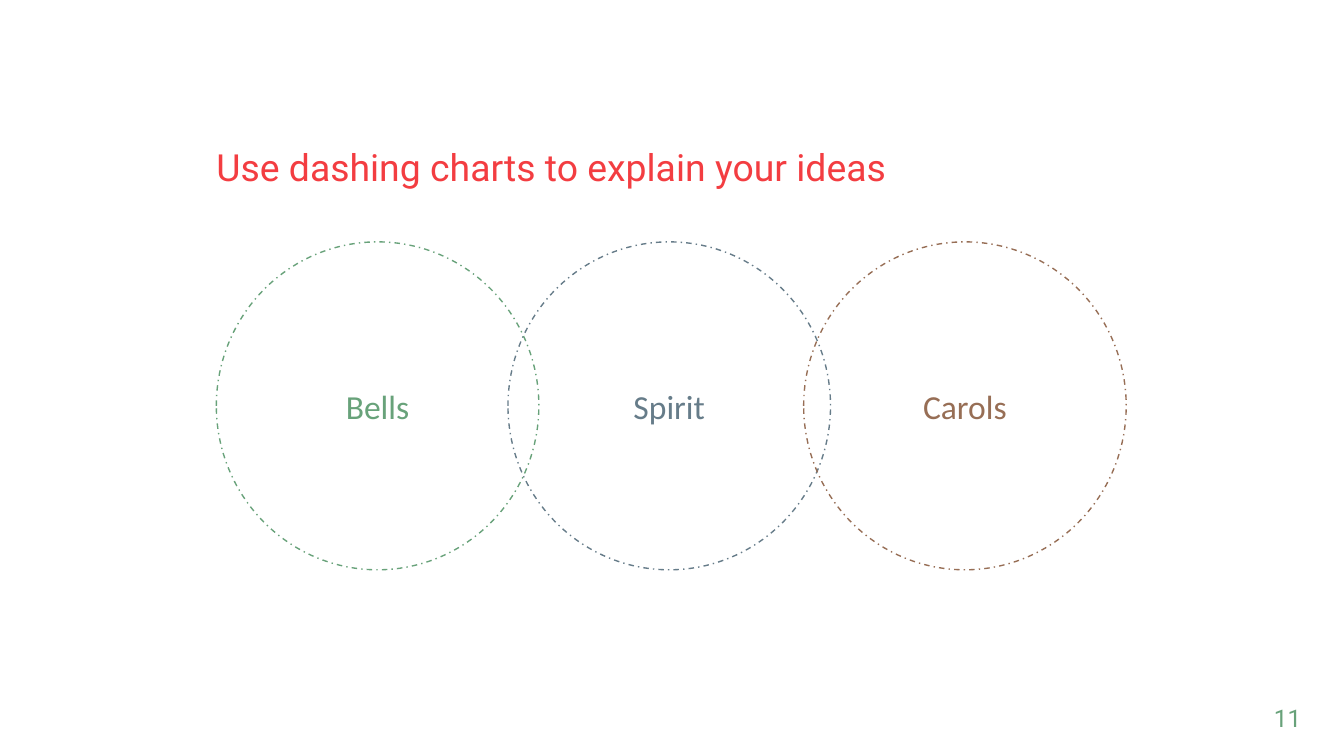
from pptx import Presentation
from pptx.dml.color import RGBColor
from pptx.enum.dml import MSO_LINE
from pptx.enum.shapes import MSO_SHAPE
from pptx.enum.text import MSO_ANCHOR, PP_ALIGN
from pptx.util import Inches, Pt

RED = RGBColor(0xF3, 0x3D, 0x41)
GREEN = RGBColor(0x68, 0xA2, 0x7A)
SLATE = RGBColor(0x66, 0x7C, 0x89)
BROWN = RGBColor(0x97, 0x6E, 0x55)

SLIDE_WIDTH = 10
SLIDE_HEIGHT = SLIDE_WIDTH * 9 / 16
CONTENT_LEFT, CONTENT_WIDTH = 1.61, 6.77
CIRCLE_TOP, CIRCLE_WIDTH, CIRCLE_HEIGHT = 1.8, 2.4, 2.44
CIRCLES = [("Spirit", 3.78, SLATE), ("Bells", CONTENT_LEFT, GREEN), ("Carols", 5.98, BROWN)]


def write(frame, text, *, size, color, font="Roboto", align=PP_ALIGN.LEFT,
          anchor=MSO_ANCHOR.MIDDLE, inset=0.1, spacing=1.0):
    """Fill a text frame with one formatted paragraph."""
    frame.word_wrap = True
    frame.vertical_anchor = anchor
    frame.margin_left = frame.margin_right = Inches(inset)
    frame.margin_top = frame.margin_bottom = Inches(inset)
    paragraph = frame.paragraphs[0]
    paragraph.alignment = align
    paragraph.line_spacing = spacing
    run = paragraph.add_run()
    run.text = text
    run.font.name = font
    run.font.size = Pt(size)
    run.font.color.rgb = color


def add_heading(slide, text):
    """Place the slide title above the circles."""
    heading = slide.shapes.title
    heading.left, heading.top = Inches(CONTENT_LEFT), Inches(1.01)
    heading.width, heading.height = Inches(CONTENT_WIDTH), Inches(0.5)
    write(heading.text_frame, text, size=20, color=RED, inset=0, spacing=0.9)


def add_circle(slide, label, left, color):
    """Draw one dashed circle with its centred label."""
    circle = slide.shapes.add_shape(
        MSO_SHAPE.OVAL, Inches(left), Inches(CIRCLE_TOP),
        Inches(CIRCLE_WIDTH), Inches(CIRCLE_HEIGHT))
    circle.shadow.inherit = False
    circle.fill.background()
    circle.line.color.rgb = color
    circle.line.width = Pt(0.75)
    circle.line.dash_style = MSO_LINE.DASH_DOT
    write(circle.text_frame, label, size=18, color=color, font="Calibri",
          align=PP_ALIGN.CENTER)


def add_page_number(slide, number):
    """Put the page number in the bottom right corner."""
    corner = slide.shapes.add_textbox(Inches(9.18), Inches(5.13), Inches(0.6), Inches(0.29))
    write(corner.text_frame, number, size=13, color=GREEN,
          align=PP_ALIGN.RIGHT, anchor=MSO_ANCHOR.TOP)


def main():
    """Build the slide and save it."""
    deck = Presentation()
    deck.slide_width, deck.slide_height = Inches(SLIDE_WIDTH), Inches(SLIDE_HEIGHT)
    slide = deck.slides.add_slide(deck.slide_layouts.get_by_name("Title Only"))
    add_heading(slide, "Use dashing charts to explain your ideas")
    for label, left, color in CIRCLES:
        add_circle(slide, label, left, color)
    add_page_number(slide, "11")
    deck.save("out.pptx")


if __name__ == "__main__":
    main()
